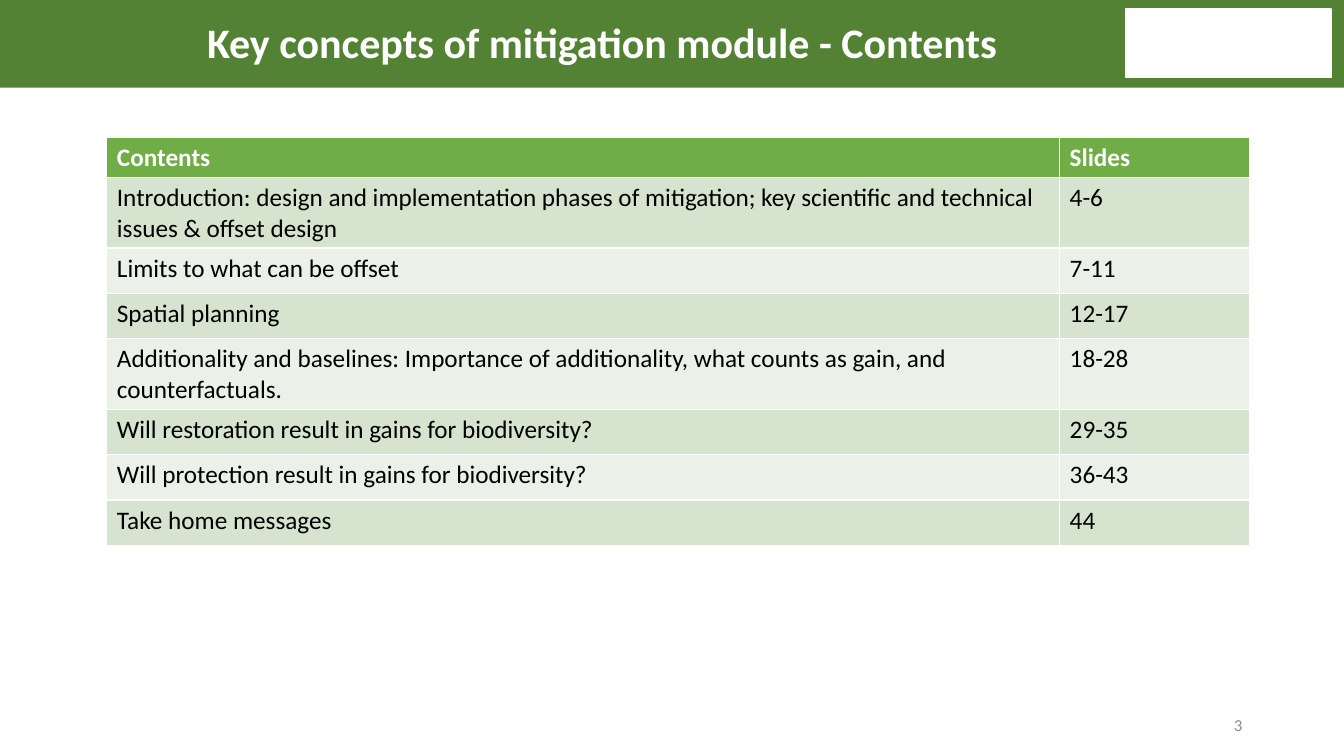
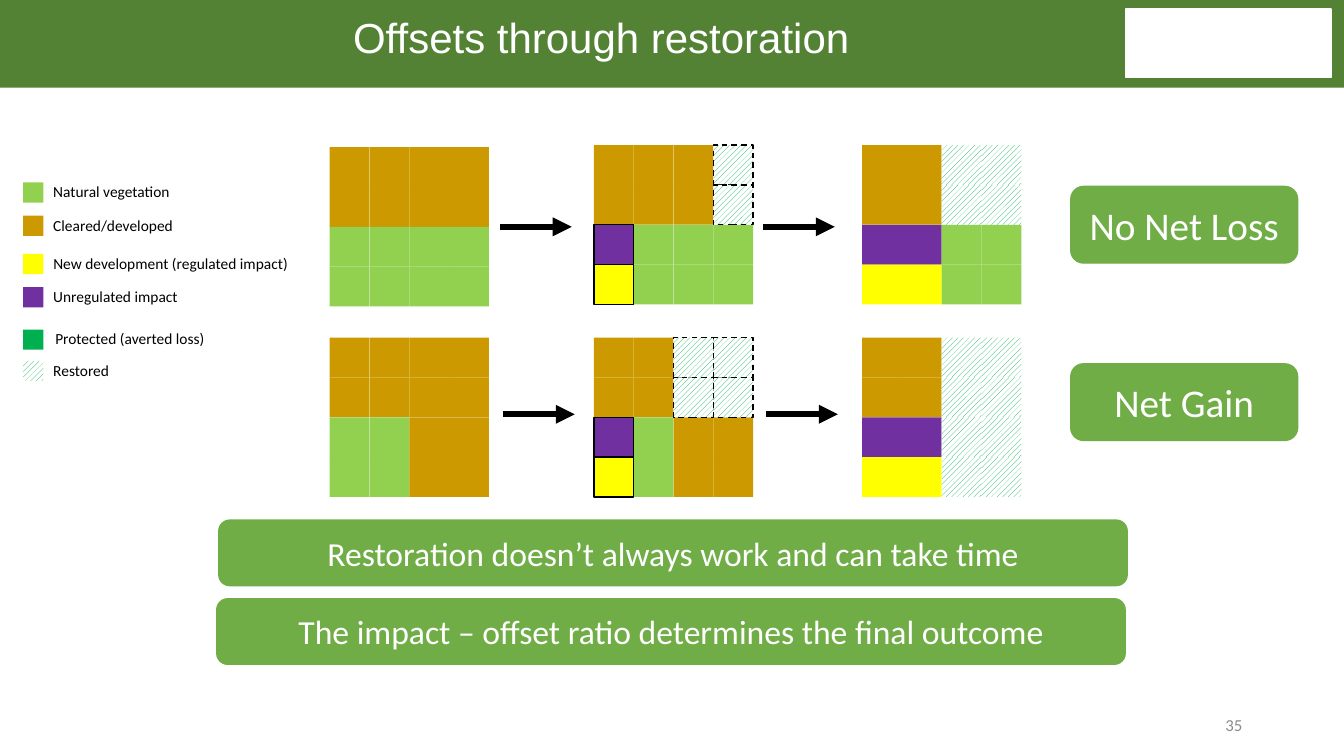
"""Build two slides on mitigation: a contents table and a restoration offset diagram."""
from lxml.etree import SubElement
from pptx import Presentation
from pptx.dml.color import RGBColor
from pptx.enum.dml import MSO_LINE, MSO_PATTERN
from pptx.enum.shapes import MSO_CONNECTOR, MSO_SHAPE
from pptx.enum.text import MSO_ANCHOR, MSO_AUTO_SIZE, PP_ALIGN
from pptx.oxml.ns import qn
from pptx.util import Inches, Pt

COLORS = {
    "band": "548235", "accent": "70AD47", "white": "FFFFFF", "black": "000000",
    "grey": "8C8C8C", "row_dark": "D5E3CF", "row_light": "EBF1E9",
    "natural": "92D050", "cleared": "CC9900", "new": "FFFF00",
    "unregulated": "7030A0", "protected": "00B050",
}
RGB = {name: RGBColor.from_string(value) for name, value in COLORS.items()}


def write(tf, text, size=18, color="black", font="Calibri", bold=False,
          align=PP_ALIGN.LEFT, anchor=MSO_ANCHOR.TOP, wrap=True, spacing=None):
    tf.word_wrap = wrap
    tf.vertical_anchor = anchor
    p = tf.paragraphs[0]
    p.alignment = align
    p.line_spacing = spacing
    r = p.add_run()
    r.text = text
    r.font.size = Pt(size)
    r.font.name = font
    r.font.bold = bold
    r.font.color.rgb = RGB[color]


def add_box(slide, left, top, width, height, fill, line=None, dash=None, kind=MSO_SHAPE.RECTANGLE):
    sp = slide.shapes.add_shape(kind, Inches(left), Inches(top), Inches(width), Inches(height))
    sp.shadow.inherit = False
    if fill == "restored":
        sp.fill.patterned()
        sp.fill.pattern = MSO_PATTERN.WIDE_UPWARD_DIAGONAL
        sp.fill.fore_color.rgb = RGB["protected"]
        sp.fill.back_color.rgb = RGB["white"]
    else:
        sp.fill.solid()
        sp.fill.fore_color.rgb = RGB[fill]
    if line:
        sp.line.color.rgb = RGB[line]
        sp.line.width = Pt(1)
        sp.line.dash_style = dash
    else:
        sp.line.fill.background()
    return sp


prs = Presentation()
prs.slide_width, prs.slide_height = Inches(13.33), Inches(7.5)
layout = prs.slide_layouts[5]

titles = [
    ("Key concepts of mitigation module - Contents", "3", (0.8, 0, 10.35, 0.9), "Calibri", True),
    ("Offsets through restoration", "35", (0.93, -0.2, 10.07, 1.2), "Arial", False),
]
slides = []
for text, number, place, font, bold in titles:
    s = prs.slides.add_slide(layout)
    title = s.shapes.title
    title.left, title.top, title.width, title.height = [Inches(v) for v in place]
    write(title.text_frame, text, size=30, color="white", font=font, bold=bold,
          align=PP_ALIGN.CENTER, anchor=MSO_ANCHOR.MIDDLE, spacing=0.9)
    tb = s.shapes.add_textbox(Inches(11.54), Inches(7.04), Inches(0.88), Inches(0.31))
    write(tb.text_frame, number, size=12, color="grey", align=PP_ALIGN.RIGHT, anchor=MSO_ANCHOR.MIDDLE)
    slides.append(s)
contents, offsets = slides

band = add_box(contents, 0, -0.03, 13.33, 0.9, "band")
logo_panel = add_box(contents, 11.17, 0.09, 2.03, 0.68, "white", "white")
for i, sp in enumerate((band, logo_panel)):
    sp.element.xpath(".//p:cNvPr")[0].set("id", str(20 + i))
    layout.shapes.element.insert(2 + i, sp.element)

rows = [
    ("Contents", "Slides"),
    ("Introduction: design and implementation phases of mitigation; key scientific and technical "
     "issues & offset design", "4-6"),
    ("Limits to what can be offset", "7-11"),
    ("Spatial planning", "12-17"),
    ("Additionality and baselines: Importance of additionality, what counts as gain, and "
     "counterfactuals.", "18-28"),
    ("Will restoration result in gains for biodiversity?", "29-35"),
    ("Will protection result in gains for biodiversity?", "36-43"),
    ("Take home messages", "44"),
]
table = contents.shapes.add_table(len(rows), 2, Inches(1.06), Inches(1.36), Inches(11.33), Inches(4.03)).table
table.columns[0].width, table.columns[1].width = Inches(9.45), Inches(1.88)
for i, row in enumerate(rows):
    header = i == 0
    table.rows[i].height = Inches(0.21 if header else 0.45)
    for j, text in enumerate(row):
        cell = table.cell(i, j)
        cell.fill.solid()
        cell.fill.fore_color.rgb = RGB["accent" if header else "row_dark" if i % 2 else "row_light"]
        write(cell.text_frame, text, color="white" if header else "black", bold=header)

legend = [
    ("natural", "Natural vegetation", 1.81, 0.43, 1.37),
    ("cleared", "Cleared/developed", 2.14, 0.43, 1.4),
    ("new", "New development (regulated impact)", 2.52, 0.43, 2.55),
    ("unregulated", "Unregulated impact", 2.85, 0.43, 1.44),
    ("protected", "Protected (averted loss)", 3.27, 0.45, 1.7),
    ("restored", "Restored", 3.58, 0.43, 0.77),
]
for fill, text, top, left, width in legend:
    add_box(offsets, 0.23, top, 0.2, 0.2, fill)
    tb = offsets.shapes.add_textbox(Inches(left), Inches(top - 0.05), Inches(width), Inches(0.29))
    write(tb.text_frame, text, size=11, wrap=False)
    tb.text_frame.auto_size = MSO_AUTO_SIZE.SHAPE_TO_FIT_TEXT

CELL = 1.58 / 4
LAND = {"G": "natural", "C": "cleared", "Y": "new", "U": "unregulated", "R": "restored"}
# Lower-case letters are outlined cells, drawn last so that their lines stay whole.
grids = [
    (3.27, 1.46, "CCCC CCCC GGGG GGGG"),
    (5.89, 1.44, "CCCr CCCr uGGG yGGG"),
    (8.55, 1.44, "CCRR CCRR UUGG YYGG"),
    (3.27, 3.35, "CCCC CCCC GGCC GGCC"),
    (5.89, 3.35, "CCrr CCrr uGCC yGCC"),
    (8.55, 3.35, "CCRR CCRR UURR YYRR"),
]
for left, top, pattern in grids:
    cells = [(code, i, j) for i, line in enumerate(pattern.split()) for j, code in enumerate(line)]
    for code, i, j in sorted(cells, key=lambda cell: cell[0].islower()):
        add_box(offsets, left + j * CELL, top + i * CELL, CELL, CELL, LAND[code.upper()],
                line="black" if code.islower() else None,
                dash=MSO_LINE.DASH if code == "r" else None)

for left, y in [(4.96, 2.25), (7.57, 2.25), (4.99, 4.11), (7.6, 4.11)]:
    arrow = offsets.shapes.add_connector(MSO_CONNECTOR.STRAIGHT, Inches(left), Inches(y),
                                         Inches(left + 0.71), Inches(y))
    arrow.line.color.rgb = RGB["black"]
    arrow.line.width = Pt(4.5)
    spPr = arrow.element.spPr
    SubElement(spPr.find(qn("a:ln")), qn("a:tailEnd"), type="triangle")
    SubElement(spPr, qn("a:effectLst"))

callouts = [
    ("No Net Loss", 10.62, 1.85, 2.25, 0.76, 28),
    ("Net Gain", 10.62, 3.61, 2.25, 0.76, 28),
    ("Restoration doesn’t always work and can take time", 2.17, 5.16, 9.01, 0.65, 24),
    ("The impact – offset ratio determines the final outcome", 2.15, 5.94, 9.01, 0.65, 24),
]
for text, left, top, width, height, size in callouts:
    sp = add_box(offsets, left, top, width, height, "accent", "accent", kind=MSO_SHAPE.ROUNDED_RECTANGLE)
    write(sp.text_frame, text, size=size, color="white", align=PP_ALIGN.CENTER, anchor=MSO_ANCHOR.MIDDLE)

prs.save("out.pptx")
